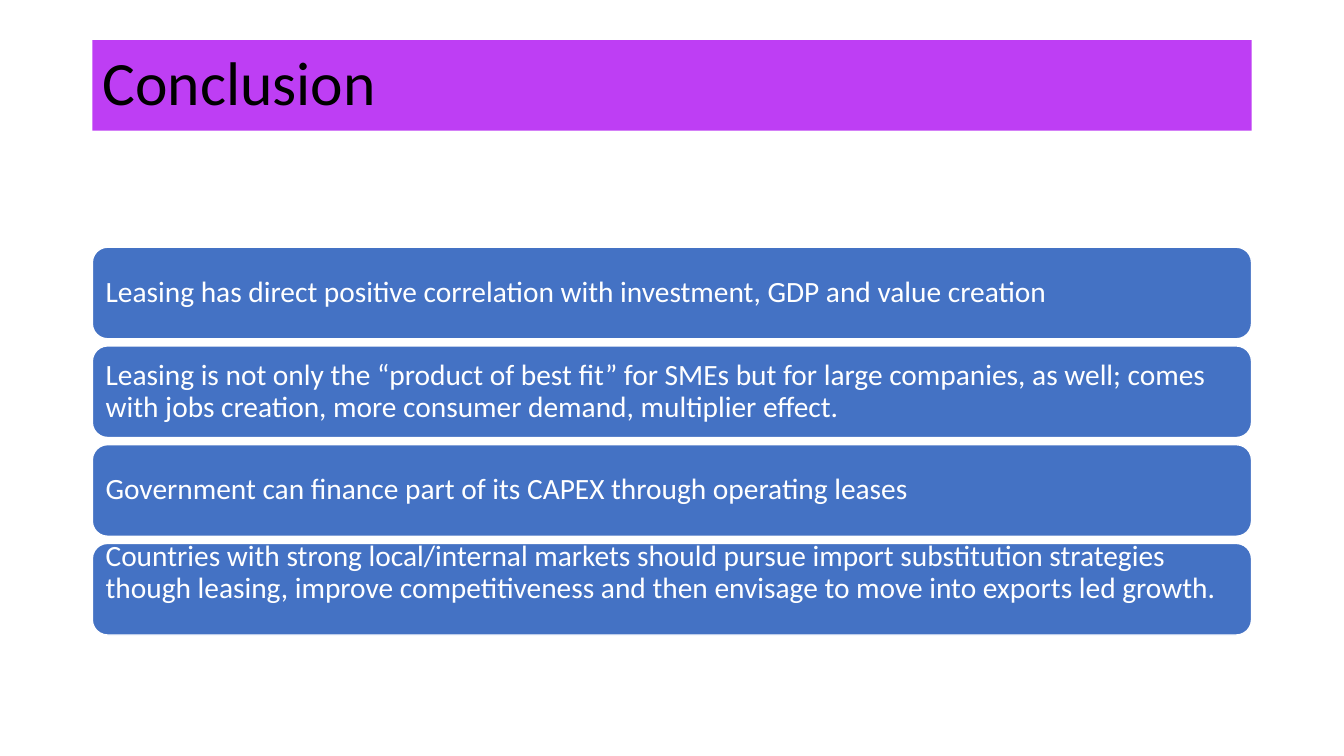
from pptx import Presentation
from pptx.dml.color import RGBColor
from pptx.enum.shapes import MSO_SHAPE
from pptx.enum.text import MSO_ANCHOR, MSO_AUTO_SIZE, PP_ALIGN
from pptx.util import Pt

ROUNDED = MSO_SHAPE.ROUNDED_RECTANGLE
MIDDLE = MSO_ANCHOR.MIDDLE
NO_AUTOFIT = MSO_AUTO_SIZE.NONE
LEFT = PP_ALIGN.LEFT

PURPLE = RGBColor(0xBE, 0x3E, 0xF4)
BLUE = RGBColor(0x44, 0x72, 0xC4)
WHITE = RGBColor(0xFF, 0xFF, 0xFF)
BLACK = RGBColor(0, 0, 0)

FONT = "Calibri"
TITLE_ONLY = 5
INSET = 6.3
CARD_GAP = 5.1

# Each conclusion with its top and bottom text insets; the last sits higher
CONCLUSIONS = [
    ("Leasing has direct positive correlation with investment, GDP and value creation",
     INSET, INSET),
    ("Leasing is not only the “product of best fit” for SMEs but for large companies, "
     "as well; comes with jobs creation, more consumer demand, multiplier effect.",
     INSET, INSET),
    ("Government can finance part of its CAPEX through operating leases",
     INSET, INSET),
    ("Countries with strong local/internal markets should pursue import substitution "
     "strategies though leasing, improve competitiveness and then envisage to move "
     "into exports led growth.", 0, 23),
]


def write_text(shape, text, size, color):
    frame = shape.text_frame
    frame.text = text
    frame.word_wrap = True
    frame.auto_size = NO_AUTOFIT
    frame.vertical_anchor = MIDDLE
    para = frame.paragraphs[0]
    para.alignment = LEFT
    para.line_spacing = 0.9
    para.font.name = FONT
    para.font.size = Pt(size)
    para.font.color.rgb = color


def add_title(page, text, left, top, width, height):
    title = page.shapes.title
    title.left, title.top = Pt(left), Pt(top)
    title.width, title.height = Pt(width), Pt(height)
    title.fill.solid()
    title.fill.fore_color.rgb = PURPLE
    write_text(title, text, 44, BLACK)


def add_cards(page, conclusions, left, top, width, height):
    pitch = (height + CARD_GAP) / len(conclusions)
    for index, (text, inset_top, inset_bottom) in enumerate(conclusions):
        card = page.shapes.add_shape(ROUNDED, Pt(left), Pt(top + index * pitch),
                                     Pt(width), Pt(pitch - CARD_GAP))
        card.shadow.inherit = False
        card.fill.solid()
        card.fill.fore_color.rgb = BLUE
        card.line.color.rgb = WHITE
        card.line.width = Pt(1)
        write_text(card, text, 21, WHITE)
        frame = card.text_frame
        frame.margin_left = frame.margin_right = Pt(INSET)
        frame.margin_top, frame.margin_bottom = Pt(inset_top), Pt(inset_bottom)


def main():
    deck = Presentation()
    deck.slide_width, deck.slide_height = Pt(960), Pt(540)
    page = deck.slides.add_slide(deck.slide_layouts[TITLE_ONLY])
    # Title band
    add_title(page, "Conclusion", 66, 28.6, 828, 64.8)
    # Stack of conclusions
    add_cards(page, CONCLUSIONS, 66, 176.6, 828, 277)
    deck.save("out.pptx")


if __name__ == "__main__":
    main()
